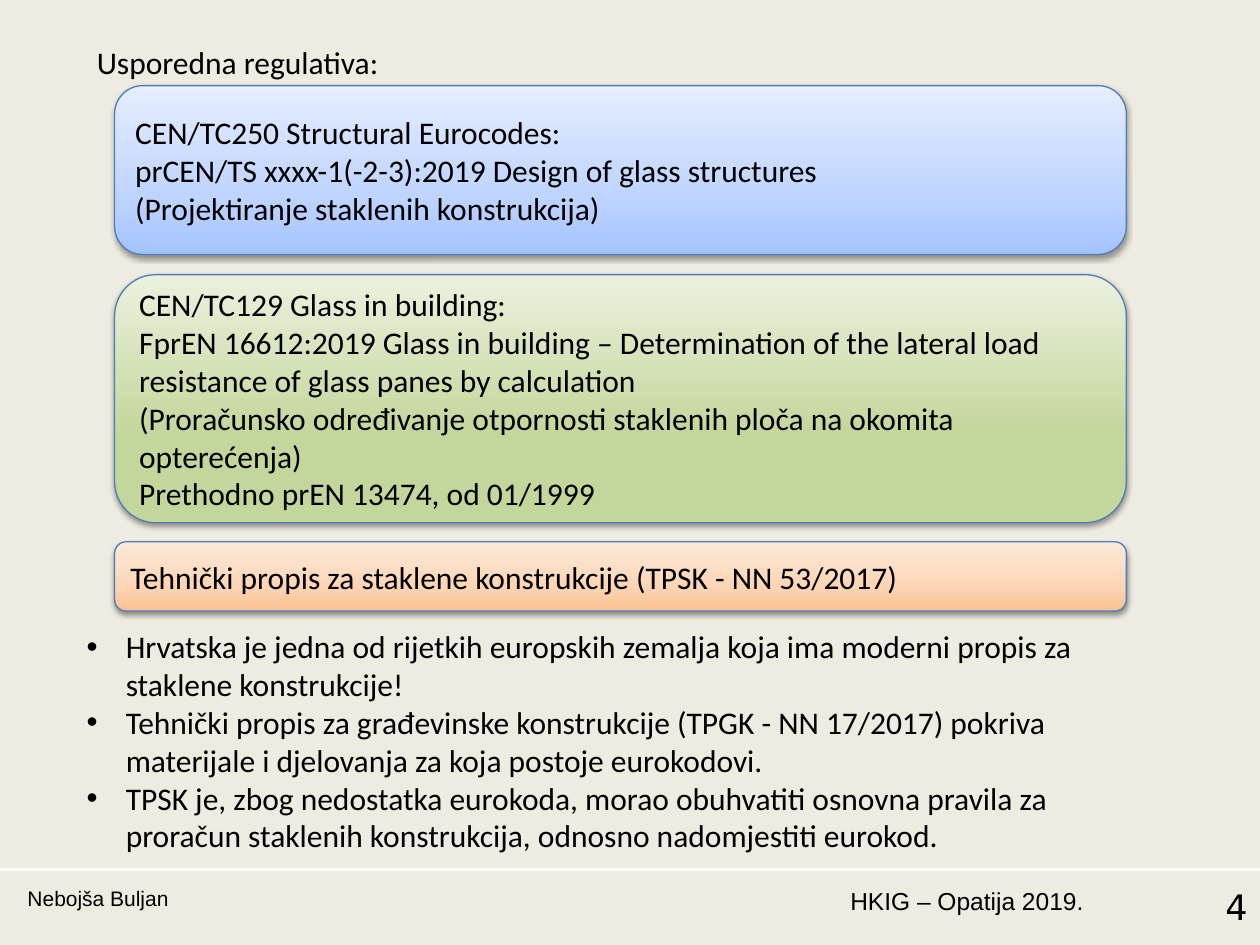
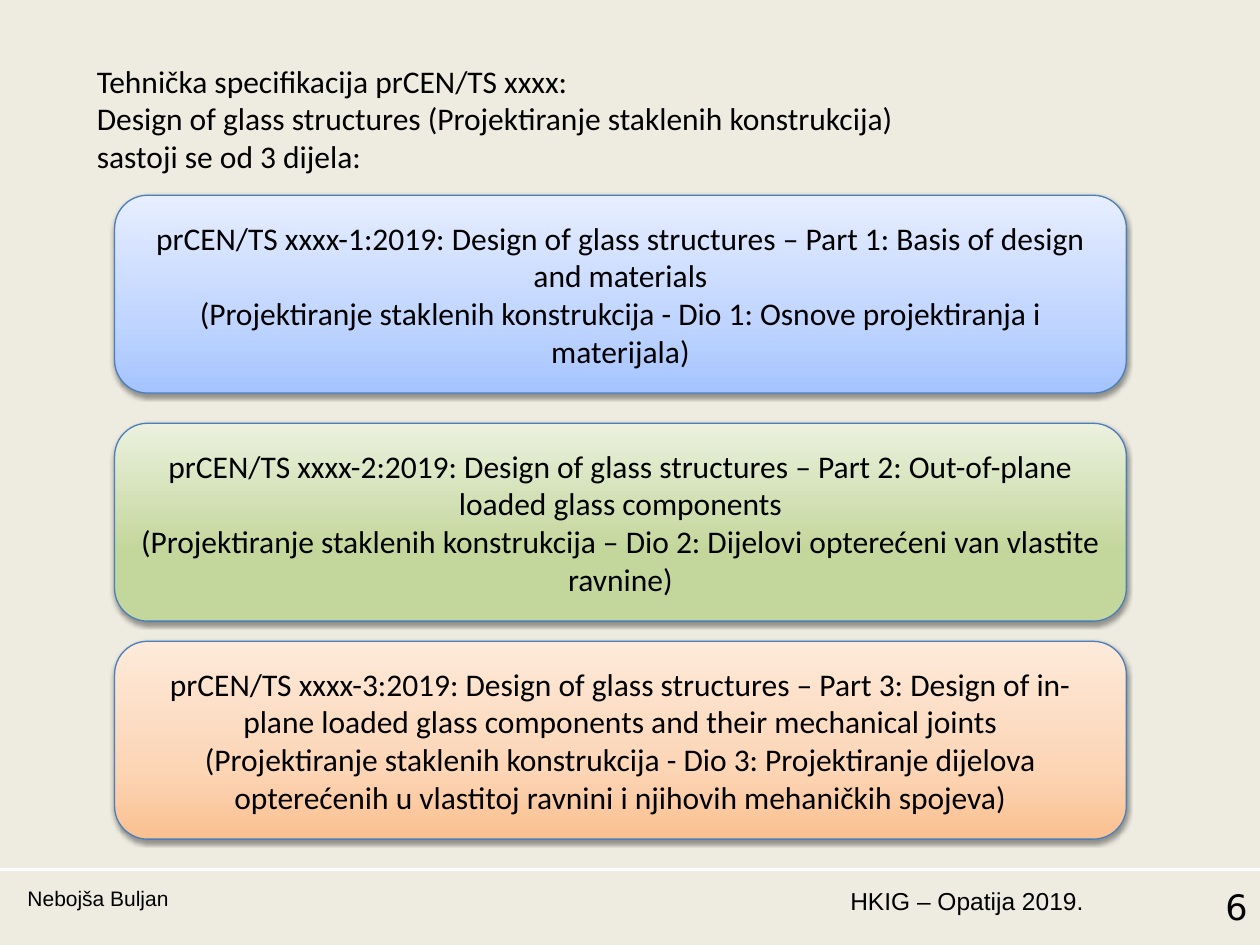
"""Builds two slides on the rules for glass structures."""
import pptx
import pptx.dml.color
import pptx.enum.shapes
import pptx.enum.text
import pptx.oxml
import pptx.oxml.ns
import pptx.util
from lxml import etree

Inches = pptx.util.Inches
Pt = pptx.util.Pt
RGBColor = pptx.dml.color.RGBColor
Align = pptx.enum.text.PP_ALIGN
Anchor = pptx.enum.text.MSO_ANCHOR
qn = pptx.oxml.ns.qn

SAND = RGBColor(0xEE, 0xEC, 0xE1)
WHITE = RGBColor(0xFF, 0xFF, 0xFF)
BLACK = RGBColor(0, 0, 0)
EDGE = RGBColor(0x4B, 0x7E, 0xBC)
BLUE = (RGBColor(0xA4, 0xC4, 0xFF), RGBColor(0xBF, 0xD4, 0xFF), RGBColor(0xE6, 0xEE, 0xFF))
GREEN = (RGBColor(0xC3, 0xD6, 0x9B), RGBColor(0xC3, 0xD6, 0x9B), RGBColor(0xEB, 0xF1, 0xDE))
PEACH = (RGBColor(0xFA, 0xC0, 0x90), RGBColor(0xFC, 0xD5, 0xB5), RGBColor(0xFD, 0xEA, 0xDA))
STOPS = (0, 35, 100)
BODY = "Calibri"
CARD_X, CARD_W = 0.91, 8.03
TEXT_W = 8.5
INDENT = Inches(0.31)


def write(frame, lines, size=18, face=BODY, align=Align.LEFT, bullet=False):
    """Fill a text frame with one paragraph per line."""
    frame.word_wrap = True
    for i, line in enumerate(lines):
        para = frame.paragraphs[0] if i == 0 else frame.add_paragraph()
        para.text = line
        para.alignment = align
        if bullet:
            props = para._p.get_or_add_pPr()
            props.set("marL", str(INDENT))
            props.set("indent", str(-INDENT))
            etree.SubElement(props, qn("a:buFont"), typeface="Arial")
            etree.SubElement(props, qn("a:buChar"), char="•")
        para.font.size = Pt(size)
        para.font.name = face
        para.font.color.rgb = BLACK


def add_text(slide, box, lines, **style):
    """Place a text box at left, top, width, height."""
    shape = slide.shapes.add_textbox(*map(Inches, box))
    write(shape.text_frame, lines, **style)


def add_card(slide, top, height, tones, lines, align):
    """Place a rounded card with a gradient and a soft shadow."""
    kind = pptx.enum.shapes.MSO_SHAPE.ROUNDED_RECTANGLE
    card = slide.shapes.add_shape(kind, *map(Inches, (CARD_X, top, CARD_W, height)))
    card.fill.gradient()
    card.fill.gradient_angle = 90
    stops = card._element.spPr.find(".//" + qn("a:gsLst"))
    for old in list(stops):
        stops.remove(old)
    for pos, tone in zip(STOPS, tones):
        stop = etree.SubElement(stops, qn("a:gs"), pos=str(pos * 1000))
        etree.SubElement(stop, qn("a:srgbClr"), val=str(tone))
    card.line.color.rgb = EDGE
    card.line.width = Pt(0.75)
    card.shadow.inherit = False
    effects = card._element.spPr.find(qn("a:effectLst"))
    shade = etree.SubElement(effects, qn("a:outerShdw"), blurRad=str(Pt(3.1)),
                             dist=str(Pt(1.6)), dir="5400000", rotWithShape="0")
    tint = etree.SubElement(shade, qn("a:srgbClr"), val=str(BLACK))
    etree.SubElement(tint, qn("a:alpha"), val="38000")
    card.text_frame.vertical_anchor = Anchor.MIDDLE
    write(card.text_frame, lines, align=align)


def add_foot(slide, number, top=6.9):
    """Draw the rule, event, author and page number."""
    kind = pptx.enum.shapes.MSO_CONNECTOR.STRAIGHT
    rule = slide.shapes.add_connector(kind, 0, Inches(top), Inches(10), Inches(top))
    rule.line.color.rgb = WHITE
    rule.line.width = Pt(1.5)
    etree.SubElement(rule._element.spPr, qn("a:effectLst"))
    row, high = top + 0.08, 0.52
    add_text(slide, (6.57, row, 2.13, high), ["HKIG – Opatija 2019."],
             size=14, face="Arial", align=Align.RIGHT)
    add_text(slide, (0.12, row, 6.54, high), ["Nebojša Buljan"], size=12, face="Arial")
    add_text(slide, (8.78, row, 1.22, high), [str(number)],
             size=20, face="DejaVu Sans", align=Align.RIGHT)


def add_page(deck, number, top, height, intro, cards, align):
    """Add a slide with footer, intro text and a stack of cards."""
    slide = deck.slides.add_slide(deck.slide_layouts[6])
    add_foot(slide, number)
    add_text(slide, (0.67, top, TEXT_W, height), intro)
    for card in cards:
        add_card(slide, *card, align)
    return slide


def add_rules(deck):
    """Build the slide that compares the regulations."""
    cards = [
        (0.68, 1.34, BLUE, [
            "CEN/TC250 Structural Eurocodes:",
            "prCEN/TS xxxx-1(-2-3):2019 Design of glass structures",
            "(Projektiranje staklenih konstrukcija)"]),
        (2.18, 1.97, GREEN, [
            "CEN/TC129 Glass in building:",
            "FprEN 16612:2019 Glass in building – Determination of the lateral load "
            "resistance of glass panes by calculation",
            "(Proračunsko određivanje otpornosti staklenih ploča na okomita opterećenja)",
            "Prethodno prEN 13474, od 01/1999"]),
        (4.3, 0.55, PEACH, [
            "Tehnički propis za staklene konstrukcije (TPSK - NN 53/2017)"]),
    ]
    slide = add_page(deck, 4, 0.29, 0.4, ["Usporedna regulativa:"], cards, Align.LEFT)
    add_text(slide, (0.59, 4.93, TEXT_W, 1.92), [
        "Hrvatska je jedna od rijetkih europskih zemalja koja ima moderni propis za "
        "staklene konstrukcije!",
        "Tehnički propis za građevinske konstrukcije (TPGK - NN 17/2017) pokriva "
        "materijale i djelovanja za koja postoje eurokodovi.",
        "TPSK je, zbog nedostatka eurokoda, morao obuhvatiti osnovna pravila za "
        "proračun staklenih konstrukcija, odnosno nadomjestiti eurokod."], bullet=True)


def add_parts(deck):
    """Build the slide on the three parts of the specification."""
    high = 1.57
    cards = [
        (1.55, high, BLUE, [
            "prCEN/TS xxxx-1:2019: Design of glass structures – Part 1: "
            "Basis of design and materials",
            "(Projektiranje staklenih konstrukcija - Dio 1: "
            "Osnove projektiranja i materijala)"]),
        (3.36, high, GREEN, [
            "prCEN/TS xxxx-2:2019: Design of glass structures – Part 2: "
            "Out-of-plane loaded glass components",
            "(Projektiranje staklenih konstrukcija – Dio 2: "
            "Dijelovi opterećeni van vlastite ravnine)"]),
        (5.09, high, PEACH, [
            "prCEN/TS xxxx-3:2019: Design of glass structures – Part 3: "
            "Design of in-plane loaded glass components and their mechanical joints",
            "(Projektiranje staklenih konstrukcija - Dio 3: Projektiranje dijelova "
            "opterećenih u vlastitoj ravnini i njihovih mehaničkih spojeva)"]),
    ]
    intro = ["Tehnička specifikacija prCEN/TS xxxx:",
             "Design of glass structures (Projektiranje staklenih konstrukcija)",
             "sastoji se od 3 dijela:"]
    add_page(deck, 6, 0.44, 1.01, intro, cards, Align.CENTER)


def main():
    """Build and save the deck."""
    deck = pptx.Presentation()
    deck.slide_width = Inches(10)
    deck.slide_height = Inches(7.5)
    ground = deck.slide_master.background.fill
    ground.solid()
    ground.fore_color.rgb = SAND
    add_rules(deck)
    add_parts(deck)
    deck.save("out.pptx")


if __name__ == "__main__":
    main()
